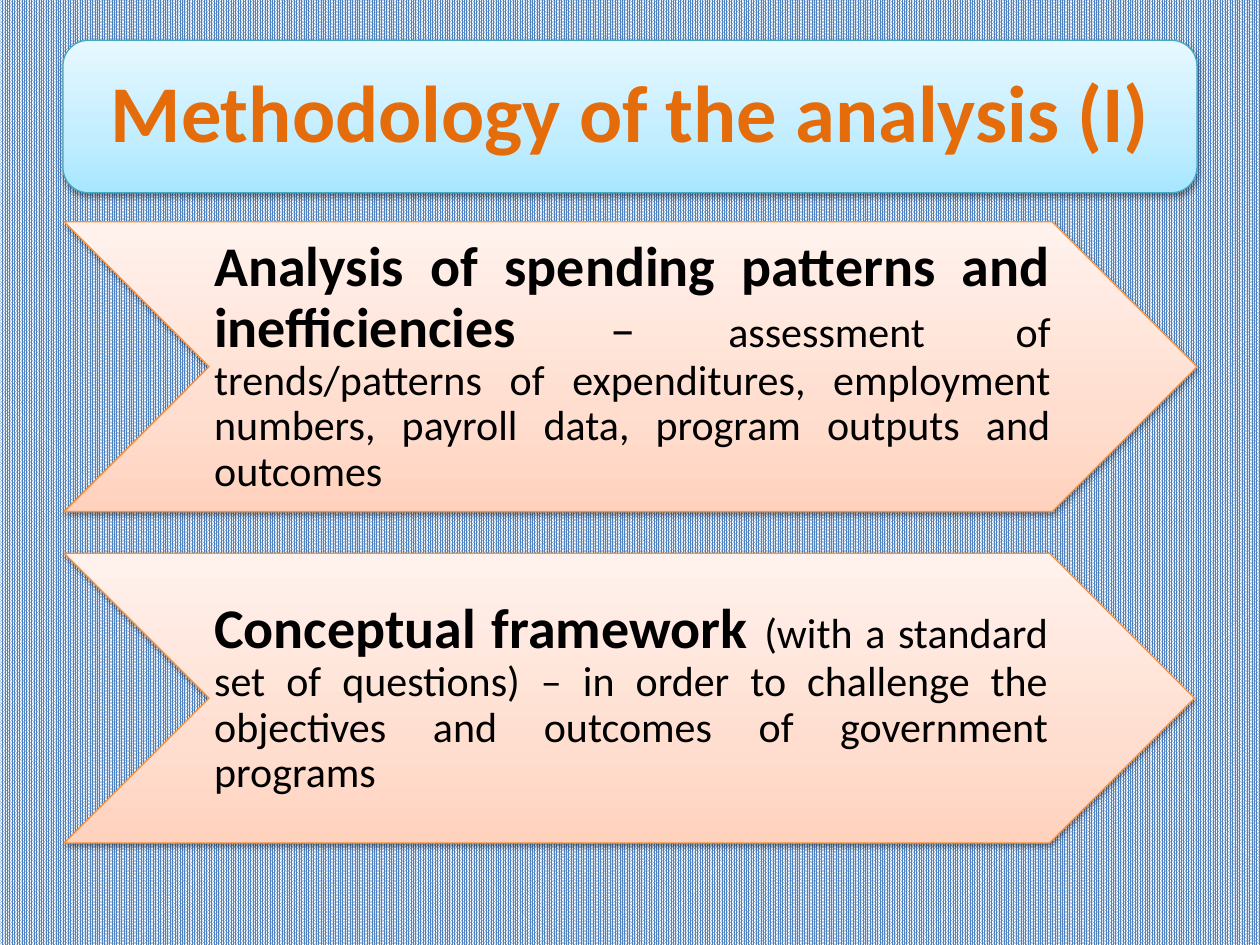
from copy import deepcopy
from dataclasses import dataclass

from lxml import etree
from pptx import Presentation
from pptx import util as u
from pptx.dml.color import RGBColor
from pptx.enum import dml, shapes, text
from pptx.oxml.ns import qn

WIDE, HIGH = u.Inches(10), u.Inches(7.5)


@dataclass(frozen=True)
class Theme:
    font: str = "Calibri"
    head: float = 46
    lead: float = 32
    dash: float = 29
    body: float = 24
    ink: str = "000000"
    title: str = "E46C0A"
    back: tuple = ("4F81BD", "FFFFFF")
    blue: tuple = ("A7E6FF", "C1EDFF", "E7F8FF")
    rim: str = "46AAC5"
    peach: tuple = ("FFD2BD", "FFDED0", "FFF2ED")
    edge: str = "F69240"


T = Theme()
rgb = RGBColor.from_string


def place(x, y, w, h):
    """Turn percentages of the slide into lengths."""
    return (int(WIDE * x / 100), int(HIGH * y / 100),
            int(WIDE * w / 100), int(HIGH * h / 100))


def shade(fill, tones):
    """Gradient rising from the bottom, with its middle tone at 35%."""
    fill.gradient()
    fill.gradient_angle = 90
    first = fill.gradient_stops[0]._gs
    first.addnext(deepcopy(first))
    for stop, spot, tone in zip(fill.gradient_stops, (0, 0.35, 1), tones):
        stop.position = spot
        stop.color.rgb = rgb(tone)


def drop(shape):
    """Soft shadow just below the shape."""
    shape.shadow.inherit = False
    root = shape._element.spPr.find(qn("a:effectLst"))
    cast = etree.SubElement(root, qn("a:outerShdw"), blurRad="40000",
                            dist="20000", dir="5400000", rotWithShape="0")
    tone = etree.SubElement(cast, qn("a:srgbClr"), val="000000")
    etree.SubElement(tone, qn("a:alpha"), val="38000")


def panel(slide, kind, area, tones, line):
    shape = slide.shapes.add_shape(kind, *place(*area))
    shade(shape.fill, tones)
    shape.line.color.rgb = rgb(line)
    shape.line.width = u.Pt(0.75)
    drop(shape)


def label(slide, area, pad, align, parts):
    """Text box with one paragraph; parts are (words, size, bold, colour)."""
    frame = slide.shapes.add_textbox(*place(*area)).text_frame
    frame.word_wrap = True
    frame.vertical_anchor = text.MSO_ANCHOR.MIDDLE
    (frame.margin_left, frame.margin_top,
     frame.margin_right, frame.margin_bottom) = map(u.Inches, pad)
    para = frame.paragraphs[0]
    para.alignment = align
    para.line_spacing = 0.9
    for words, size, bold, tone in parts:
        run = para.add_run()
        run.text = words
        run.font.name = T.font
        run.font.size = u.Pt(size)
        run.font.bold = bold
        run.font.color.rgb = rgb(tone)


def banner(slide, words):
    panel(slide, shapes.MSO_SHAPE.ROUNDED_RECTANGLE,
          (5, 4.27, 90, 16.13), T.blue, T.rim)
    label(slide, (5.6, 5.07, 88.8, 14.53), (0.19,) * 4,
          text.PP_ALIGN.CENTER, [(words, T.head, True, T.title)])


def arrow(slide, row, width, parts):
    top, tall = 23.47 + 35.07 * row, 30.67
    panel(slide, shapes.MSO_SHAPE.CHEVRON,
          (5.1, top, width, tall), T.peach, T.edge)
    label(slide, (16.6, top, width - 23.1, tall), (0.04, 0.02, 0, 0.02),
          text.PP_ALIGN.JUSTIFY,
          [(words, size, size == T.lead, T.ink) for words, size in parts])


def main():
    deck = Presentation()
    deck.slide_width, deck.slide_height = WIDE, HIGH
    slide = deck.slides.add_slide(deck.slide_layouts[6])

    # Woven background
    fill = slide.background.fill
    fill.patterned()
    fill.pattern = dml.MSO_PATTERN.PERCENT_90
    fill.fore_color.rgb, fill.back_color.rgb = map(rgb, T.back)

    # Title
    banner(slide, "Methodology of the analysis (I)")

    # Method steps
    steps = [
        (89.9, [("Analysis of spending patterns and inefficiencies ", T.lead),
                ("– ", T.dash),
                ("assessment of trends/patterns of expenditures, employment "
                 "numbers, payroll data, program outputs and outcomes",
                 T.body)]),
        (89.7, [("Conceptual framework ", T.lead),
                ("(with a standard set of questions) – in order to challenge "
                 "the objectives and outcomes of government programs",
                 T.body)]),
    ]
    for row, (width, parts) in enumerate(steps):
        arrow(slide, row, width, parts)

    deck.save("out.pptx")


if __name__ == "__main__":
    main()
